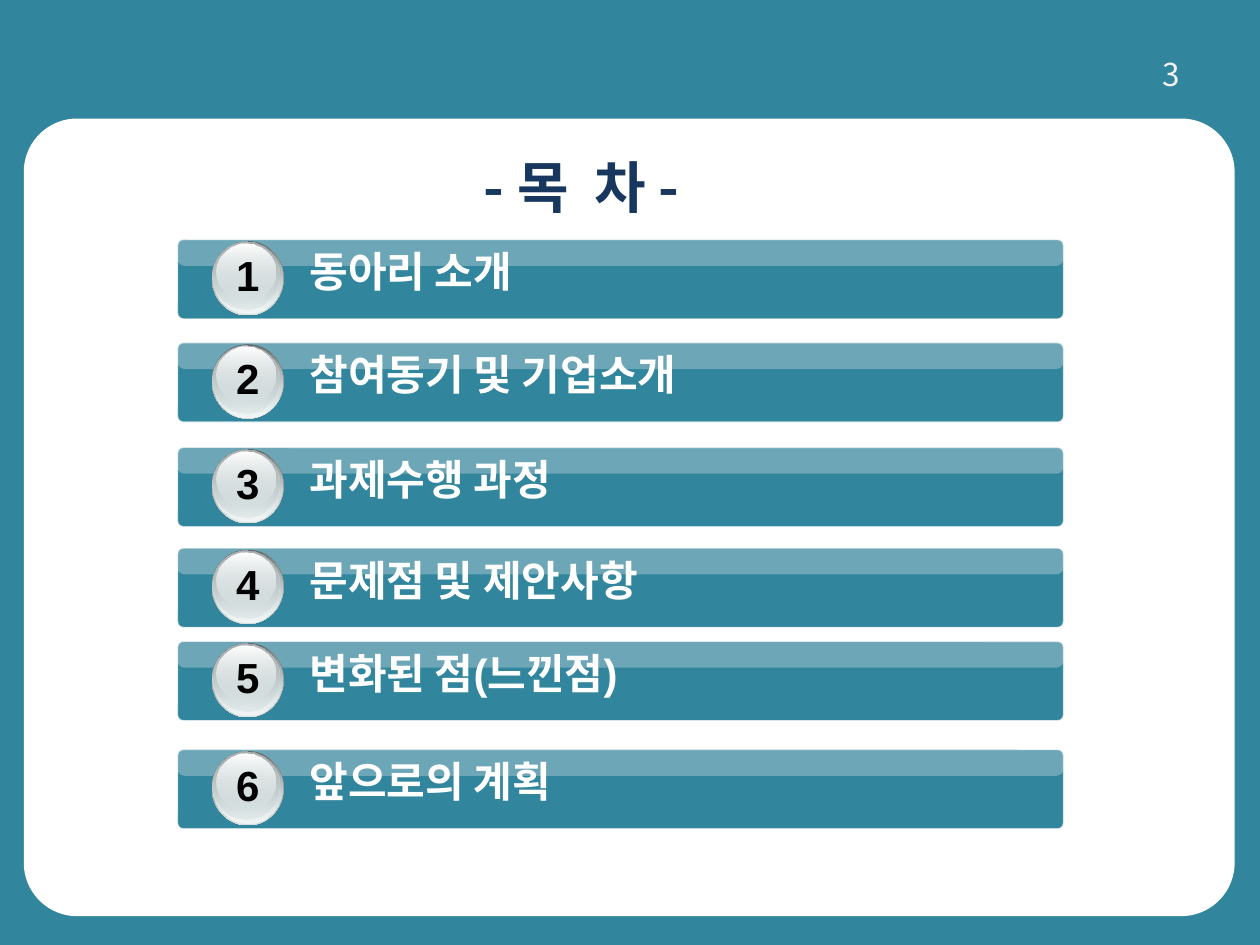
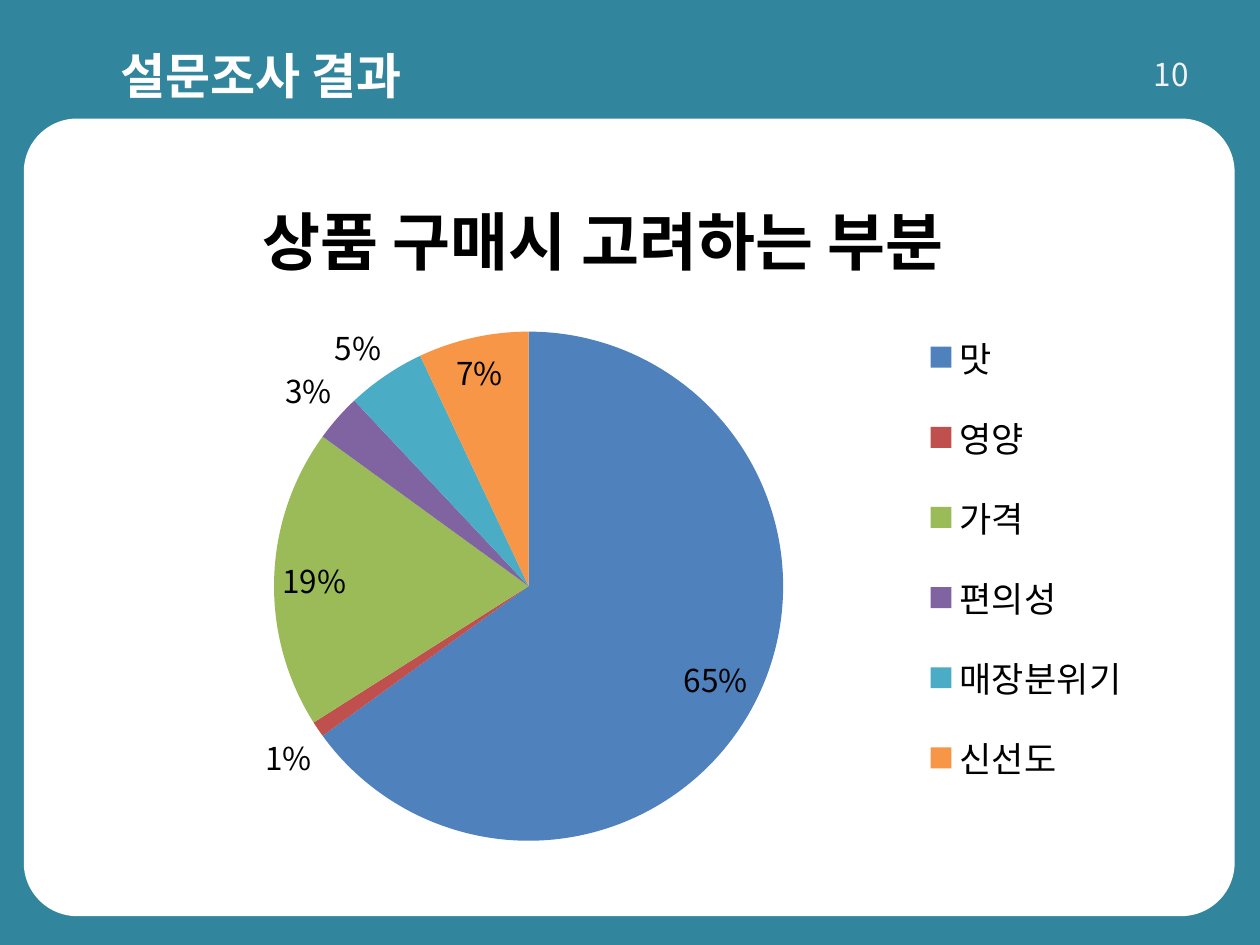
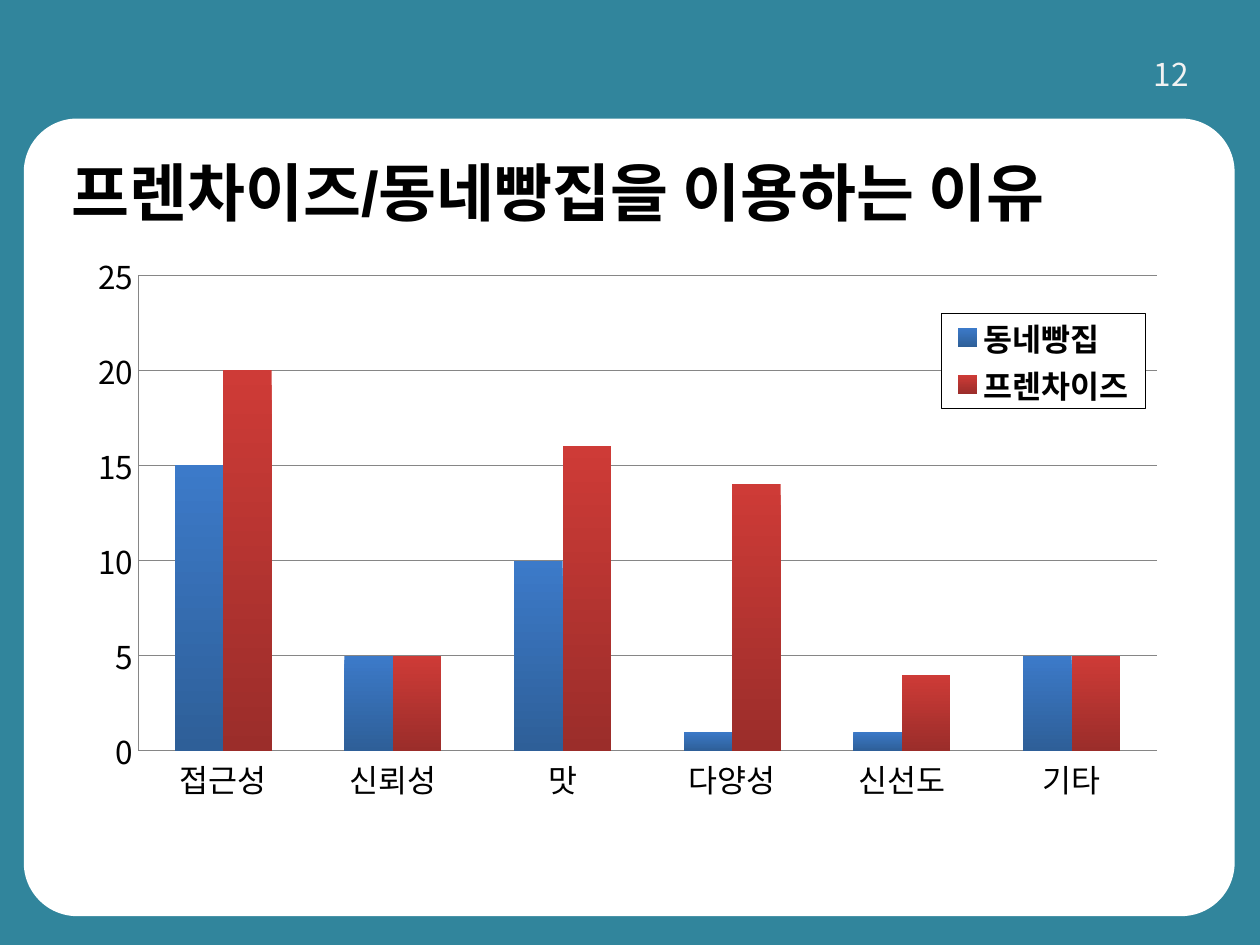
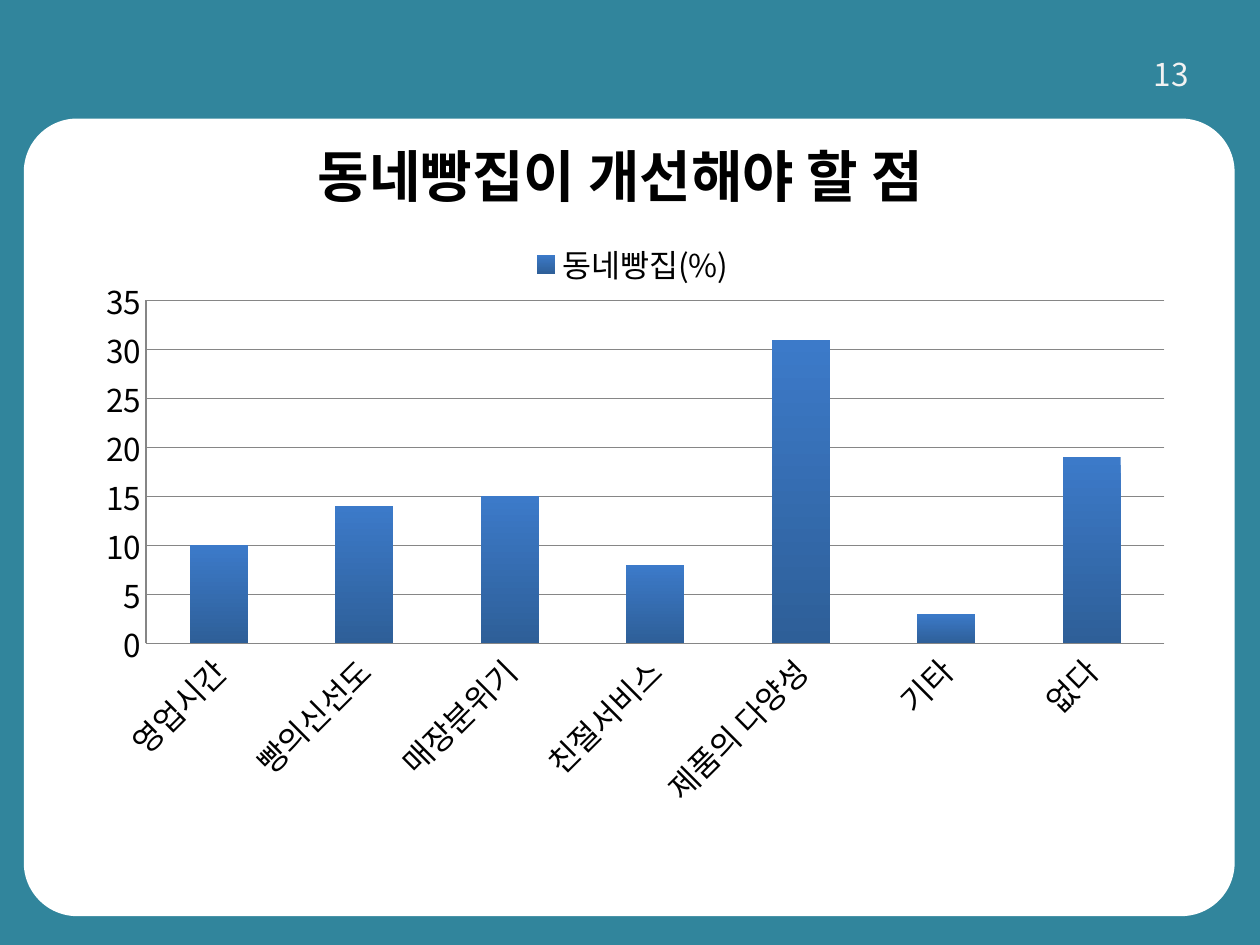
from lxml import etree
from pptx import Presentation
from pptx.chart.data import CategoryChartData
from pptx.dml.color import RGBColor
from pptx.enum import chart as ch, shapes, text
from pptx.oxml import parse_xml
from pptx.oxml.ns import nsdecls, qn
from pptx.util import Cm, Pt

TEAL = RGBColor(0x31, 0x85, 0x9C)
WHITE = RGBColor(0xFF, 0xFF, 0xFF)
BLACK = RGBColor(0, 0, 0)
NAVY = RGBColor(0x17, 0x37, 0x5E)
PAGE_GREY = RGBColor(0xF2, 0xF2, 0xF2)
GLOSS = RGBColor(0xF8, 0xF8, 0xF8)
GRID = RGBColor(0x86, 0x86, 0x86)
SILVER = RGBColor(0xD6, 0xE1, 0xE2)
BLUES = (RGBColor(0x3C, 0x7A, 0xC9), RGBColor(0x2E, 0x5F, 0x98))
REDS = (RGBColor(0xCE, 0x3B, 0x37), RGBColor(0x9B, 0x2D, 0x2A))
SLICES = [RGBColor.from_string(code) for code in
          ("4F81BD", "C0504D", "9BBB59", "8064A2", "4BACC6", "F79646")]
SANS, KOREAN = "Arial", "Noto Sans CJK KR"

# Contents: label and top of each bar, in cm
AGENDA = [
    ("동아리 소개", 4.83),
    ("참여동기 및 기업소개", 6.91),
    ("과제수행 과정", 9.02),
    ("문제점 및 제안사항", 11.05),
    ("변화된 점(느낀점)", 12.93),
    ("앞으로의 계획", 15.11),
]
BAR_LEFT, BAR_WIDTH = 3.58, 17.86
# Rings of a badge: offset from the bar and size; colours; opacity of both ends
BADGE = [
    ((0.69, 0.03, 1.45, 1.5), (RGBColor(0x63, 0x68, 0x69), SILVER), (100, 100)),
    ((0.71, 0.03, 1.4, 1.47), (SILVER, RGBColor(0xF1, 0xF5, 0xF5)), (0, 100)),
    ((0.71, 0.05, 1.35, 1.37), (RGBColor(0xAA, 0xB2, 0xB3), SILVER), (100, 48)),
    ((0.79, 0.08, 1.19, 1.12), (WHITE, SILVER), (100, 38)),
]

# Charts: places in cm; layouts as fractions of the chart
PURCHASE = dict(
    title="상품 구매시 고려하는 부분", title_at=(0.17, 0.05),
    place=(1.19, 2.77, 22.81, 14.48),
    cats=["맛", "영양", "가격", "편의성", "매장분위기", "신선도"],
    series=[("Series 1", [65, 1, 19, 3, 5, 7])],
    plot=(0.19, 0.27, 0.45, 0.71), legend=(0.75, 0.23, 0.21, 0.71))
REASONS = dict(
    place=(1.19, 3.89, 22.81, 12.78), top=25,
    cats=["접근성", "신뢰성", "맛", "다양성", "신선도", "기타"],
    series=[("동네빵집", [15, 5, 10, 1, 1, 5]),
            ("프렌차이즈", [20, 5, 16, 14, 4, 5])],
    plot=(0.07, 0.13, 0.9, 0.75), legend=(0.78, 0.19, 0.18, 0.15))
IMPROVEMENTS = dict(
    place=(1.12, 4.72, 22.81, 12.14), top=35,
    cats=["영업시간", "빵의신선도", "매장분위기", "친절서비스",
          "제품의 다양성", "기타", "없다"],
    series=[("동네빵집(%)", [10, 14, 15, 8, 31, 3, 19])],
    plot=(0.08, 0.11, 0.9, 0.57), legend=(0.4, 0.01, 0.22, 0.08))


def style(font, size, color, bold=False, latin=KOREAN):
    font.size, font.bold, font.name = Pt(size), bold, latin
    font.color.rgb = color
    etree.SubElement(font._rPr, qn("a:ea")).set("typeface", KOREAN)


def put_text(holder, wording, place, size, color, bold=True, latin=SANS,
             centred=False, middle=False):
    frame = holder.add_textbox(*map(Cm, place)).text_frame
    frame.word_wrap = True
    if middle:
        frame.vertical_anchor = text.MSO_ANCHOR.MIDDLE
    line = frame.paragraphs[0]
    line.alignment = text.PP_ALIGN.CENTER if centred else text.PP_ALIGN.LEFT
    run = line.add_run()
    run.text = wording
    style(run.font, size, color, bold, latin)


def shade(fill, colors):
    """Fill from the first colour at the top to the second at the bottom."""
    fill.gradient()
    fill.gradient_angle = 270
    for stop, color in zip(fill.gradient_stops, colors):
        stop.color.rgb = color


def set_opacity(shape, *percents):
    """Apply one opacity to each colour of the shape, in order."""
    for color, percent in zip(shape._element.spPr.iter(qn("a:srgbClr")), percents):
        if percent < 100:
            etree.SubElement(color, qn("a:alpha")).set("val", str(percent * 1000))


def put_shape(holder, kind, place, fill, corner=None):
    shape = holder.add_shape(kind, *map(Cm, place))
    shape.shadow.inherit = False
    shape.line.fill.background()
    if corner is not None:
        shape.adjustments[0] = corner
    if isinstance(fill, RGBColor):
        shape.fill.solid()
        shape.fill.fore_color.rgb = fill
    else:
        shade(shape.fill, fill)
    return shape


def new_slide(prs, page):
    slide = prs.slides.add_slide(prs.slide_layouts[6])
    kinds = shapes.MSO_SHAPE
    put_shape(slide.shapes, kinds.RECTANGLE, (0, 0, 25.4, 19.05), TEAL)
    put_shape(slide.shapes, kinds.ROUNDED_RECTANGLE,
              (0.48, 2.39, 24.41, 16.08), WHITE, 0.067)
    put_text(slide.shapes, page, (22.43, 0.99, 2.36, 1.02), 18, PAGE_GREY,
             bold=False, latin=KOREAN, centred=True, middle=True)
    return slide


def put_agenda_item(slide, number, label, top):
    group = slide.shapes.add_group_shape().shapes
    rounded = shapes.MSO_SHAPE.ROUNDED_RECTANGLE
    bar = put_shape(group, rounded, (BAR_LEFT, top, BAR_WIDTH, 1.6), TEAL, 0.073)
    bar.line.color.rgb = WHITE
    bar.line.width = Pt(0.75)
    set_opacity(bar, 100, 70)
    gloss = put_shape(group, rounded, (BAR_LEFT, top, BAR_WIDTH, 0.53), GLOSS, 0.264)
    set_opacity(gloss, 30)
    put_text(group, label, (5.99, top, 13.59, 1.27), 24, WHITE)
    for (dx, dy, width, height), colors, opacities in BADGE:
        ring = put_shape(group, shapes.MSO_SHAPE.OVAL,
                         (BAR_LEFT + dx, top + dy, width, height), colors)
        set_opacity(ring, *opacities)
    put_text(group, str(number), (BAR_LEFT + 0.74, top + 0.08, 1.35, 1.27),
             24, BLACK, centred=True)


def set_layout(element, index, box, inner=False):
    """Place a chart part by fractions; index is where its layout belongs."""
    for old in element.findall(qn("c:layout")):
        element.remove(old)
    target = '<c:layoutTarget val="inner"/>' if inner else ""
    modes = '<c:xMode val="edge"/><c:yMode val="edge"/>'
    sizes = "".join(f'<c:{tag} val="{value}"/>' for tag, value in zip("xywh", box))
    element.insert(index, parse_xml(
        f'<c:layout {nsdecls("c")}><c:manualLayout>{target}{modes}{sizes}'
        "</c:manualLayout></c:layout>"))


def put_chart(slide, kind, content):
    data = CategoryChartData()
    data.categories = content["cats"]
    for name, values in content["series"]:
        data.add_series(name, values)
    chart = slide.shapes.add_chart(kind, *map(Cm, content["place"]), data).chart
    style(chart.font, 18, BLACK)
    chart.has_title = "title" in content
    chart.has_legend = True
    chart.legend.position = ch.XL_LEGEND_POSITION.RIGHT
    chart.legend.include_in_layout = False
    set_layout(chart.legend._element, 1, content["legend"])
    set_layout(chart._chartSpace.chart.plotArea, 0, content["plot"], inner=True)
    return chart


def put_pie(slide, content):
    chart = put_chart(slide, ch.XL_CHART_TYPE.PIE, content)
    run = chart.chart_title.text_frame.paragraphs[0].add_run()
    run.text = content["title"]
    style(run.font, 36, BLACK, bold=True)
    set_layout(chart.chart_title._element, 1, content["title_at"])
    style(chart.legend.font, 20, BLACK)
    plot = chart.plots[0]
    plot.vary_by_categories = True
    for index, color in enumerate(SLICES):
        fill = plot.series[0].points[index].format.fill
        fill.solid()
        fill.fore_color.rgb = color
    plot.has_data_labels = True
    labels = plot.data_labels
    labels.show_percentage, labels.show_value = True, False
    labels.number_format, labels.number_format_is_linked = "0%", False
    labels.position = ch.XL_LABEL_POSITION.BEST_FIT
    style(labels.font, 18, BLACK)


def put_columns(slide, content):
    chart = put_chart(slide, ch.XL_CHART_TYPE.COLUMN_CLUSTERED, content)
    plot = chart.plots[0]
    plot.vary_by_categories = False
    plot.gap_width, plot.overlap = 150, 0
    for series, colors in zip(plot.series, (BLUES, REDS)):
        shade(series.format.fill, colors)
    values = chart.value_axis
    values.minimum_scale, values.maximum_scale = 0, content["top"]
    values.major_unit = 5
    values.has_major_gridlines = True
    for axis in (values, chart.category_axis):
        axis.major_tick_mark = axis.minor_tick_mark = ch.XL_TICK_MARK.NONE
        style(axis.tick_labels.font, 18, BLACK)
    for part in (values, values.major_gridlines, chart.category_axis):
        part.format.line.color.rgb = GRID
        part.format.line.width = Pt(0.75)
    return chart


def frame_legend(legend):
    style(legend.font, 18, BLACK, bold=True)
    frame = parse_xml(
        f'<c:spPr {nsdecls("c", "a")}>'
        f'<a:solidFill><a:srgbClr val="{WHITE}"/></a:solidFill>'
        f'<a:ln w="9525"><a:solidFill><a:srgbClr val="{BLACK}"/></a:solidFill></a:ln>'
        "</c:spPr>")
    legend._element.find(qn("c:txPr")).addprevious(frame)


def main():
    prs = Presentation()
    prs.slide_width, prs.slide_height = Cm(25.4), Cm(19.05)

    agenda = new_slide(prs, "3")
    put_text(agenda.shapes, "- 목  차 -", (7.75, 2.31, 7.95, 2.87), 32, NAVY,
             latin=KOREAN, centred=True, middle=True)
    for number, (label, top) in enumerate(AGENDA, 1):
        put_agenda_item(agenda, number, label, top)

    purchase = new_slide(prs, "10")
    put_text(purchase.shapes, "설문조사 결과", (2.18, 0.79, 9.93, 1.45), 28, WHITE)
    put_pie(purchase, PURCHASE)

    reasons = new_slide(prs, "12")
    put_text(reasons.shapes, "프렌차이즈/동네빵집을 이용하는 이유",
             (1.19, 2.97, 23.7, 1.8), 36, BLACK)
    frame_legend(put_columns(reasons, REASONS).legend)

    improvements = new_slide(prs, "13")
    chart = put_columns(improvements, IMPROVEMENTS)
    slanted = chart.category_axis._element.find(qn("c:txPr")).find(qn("a:bodyPr"))
    slanted.set("rot", "-2700000")
    put_text(improvements.shapes, "동네빵집이 개선해야 할 점",
             (2.31, 2.72, 20.4, 1.63), 32, BLACK, centred=True)

    prs.save("out.pptx")


if __name__ == "__main__":
    main()
